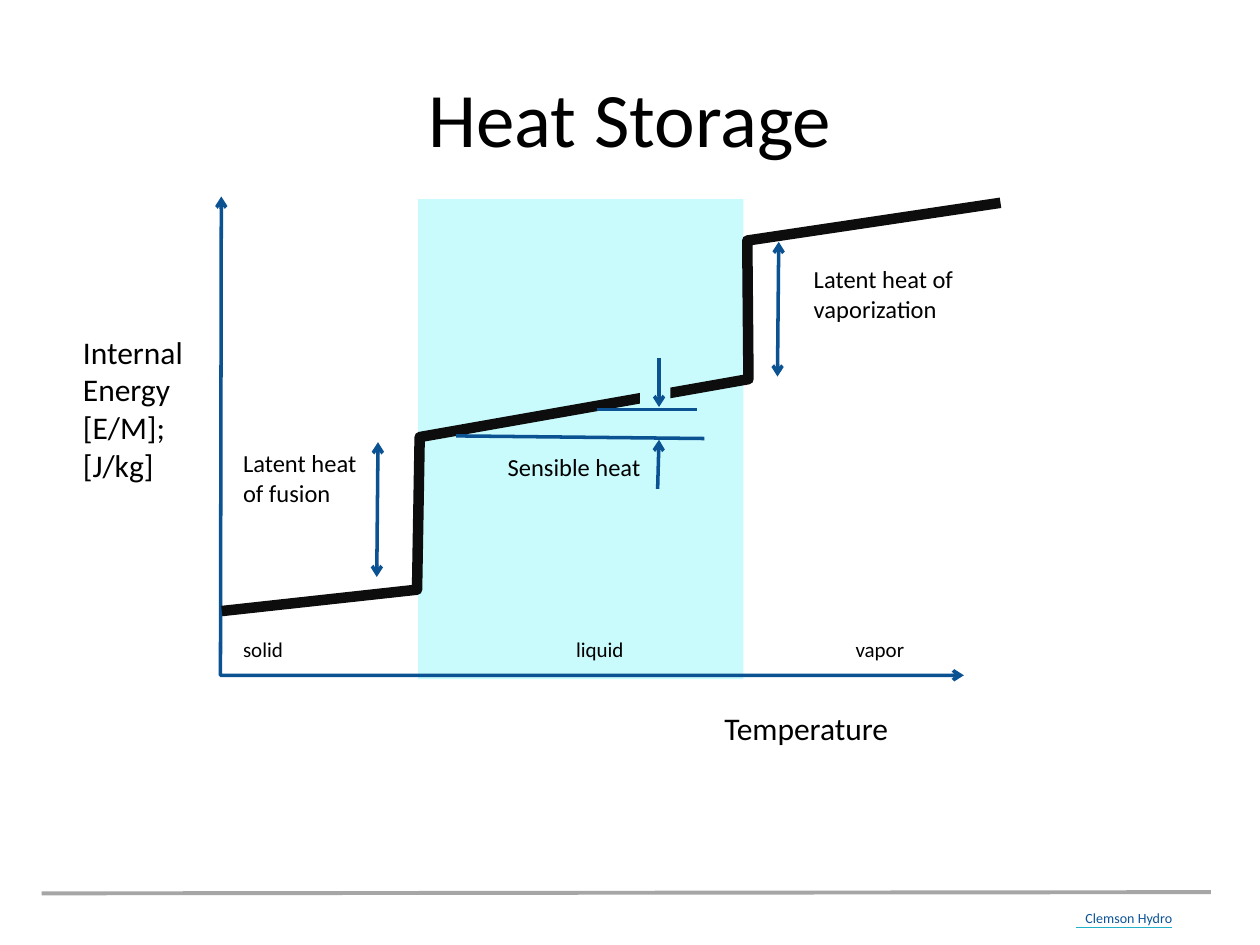
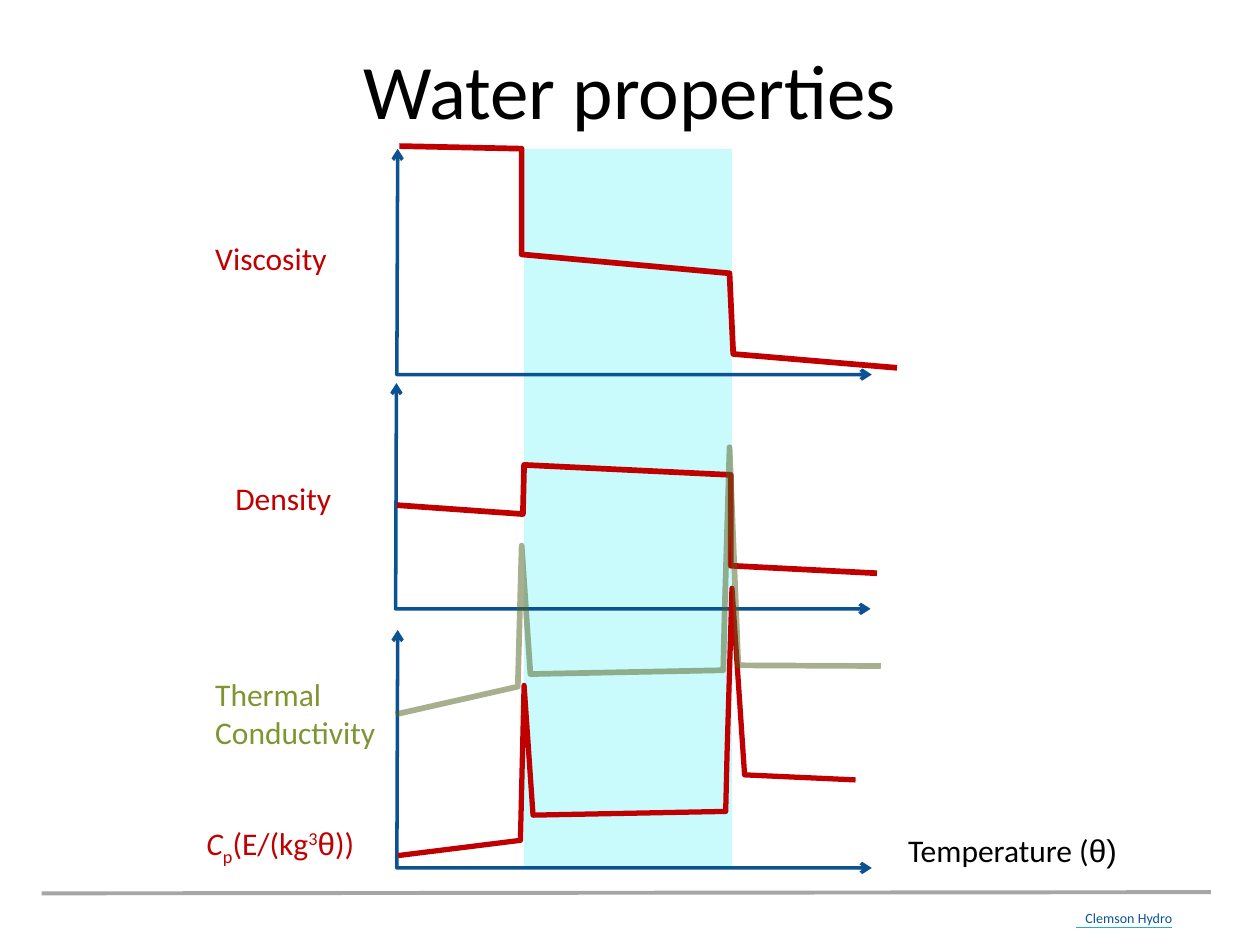
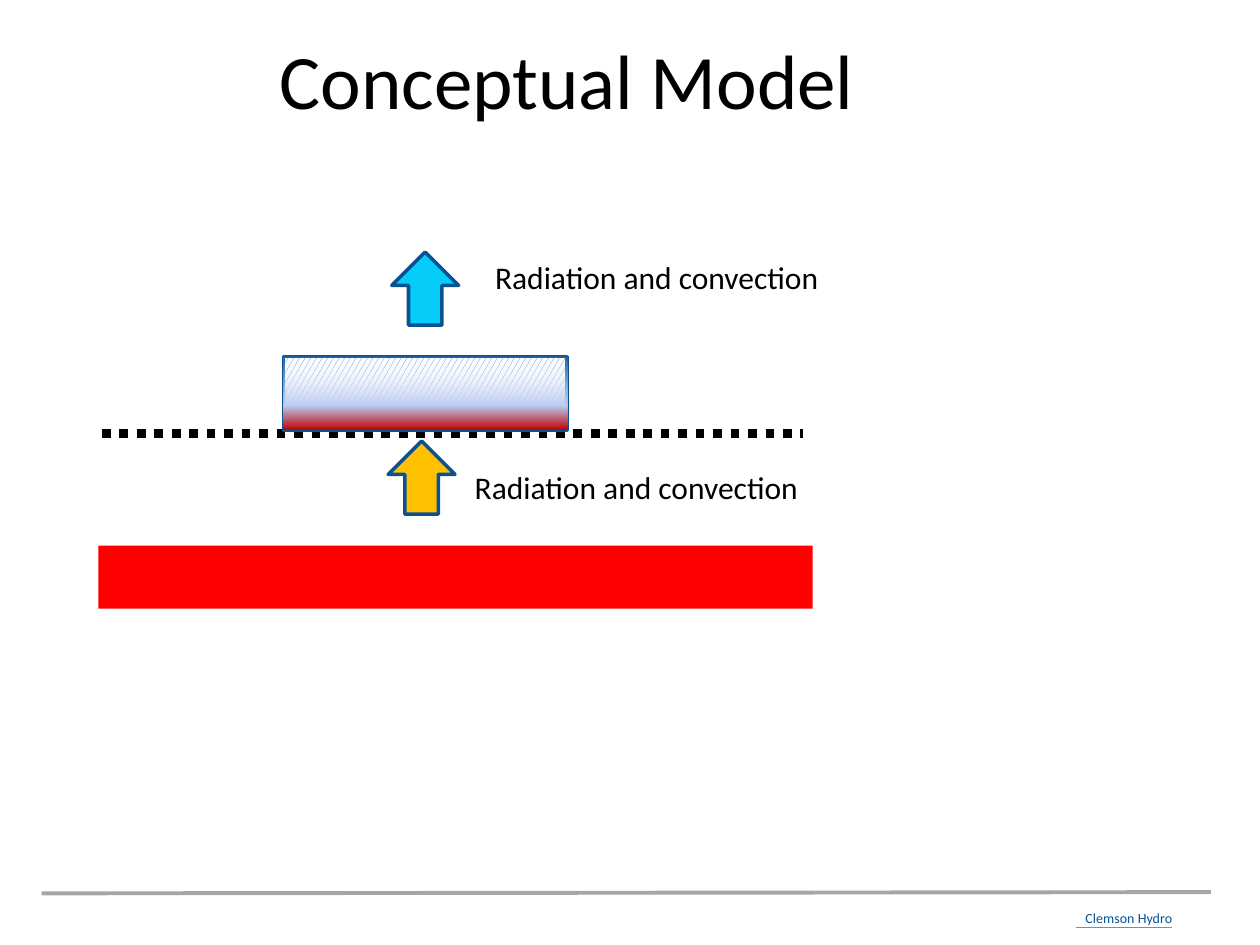
from lxml import etree
from pptx import Presentation
from pptx.dml.color import RGBColor
from pptx.enum import dml, shapes, text
from pptx.oxml import ns
from pptx.util import Pt

FONT = "Calibri"
BLACK, INK, RED = "000000", "0D0D0D", "C00000"
AXIS_BLUE, LIQUID, OLIVE = "0B5292", "C9FAFC", "7E9632"
BOTH, START, END = ("headEnd", "tailEnd"), ("headEnd",), ("tailEnd",)


def rgb(color):
    return RGBColor.from_string(color)


def add_xml(parent, tag, **attributes):
    return etree.SubElement(parent, ns.qn(tag), attributes)


def format_run(run, color=BLACK, baseline=None, **formats):
    for name, value in {"name": FONT, **formats}.items():
        setattr(run.font, name, value)
    run.font.color.rgb = rgb(color)
    if baseline:
        run.font._element.set("baseline", str(baseline * 1000))


def add_title(slide, heading, left, top):
    title = slide.shapes.title
    place = {"left": left, "top": top, "width": 648, "height": 90}
    for name, value in place.items():
        setattr(title, name, Pt(value))
    title.text_frame.vertical_anchor = text.MSO_ANCHOR.MIDDLE
    paragraph = title.text_frame.paragraphs[0]
    paragraph.alignment = text.PP_ALIGN.CENTER
    run = paragraph.add_run()
    run.text = heading
    format_run(run, size=Pt(44))


def add_label(slide, lines, box, size=18, color=BLACK, align=None, tabs=()):
    """Each line is a string or a list of (text, run formats) pairs."""
    label = slide.shapes.add_textbox(*map(Pt, box))
    frame = label.text_frame
    frame.word_wrap = True
    for number, line in enumerate(lines):
        paragraph = frame.add_paragraph() if number else frame.paragraphs[0]
        if tabs:
            stops = add_xml(paragraph._p.get_or_add_pPr(), "a:tabLst")
            for stop in tabs:
                add_xml(stops, "a:tab", pos=str(Pt(stop)), algn="l")
        paragraph.alignment = align
        for words, formats in [(line, {})] if isinstance(line, str) else line:
            run = paragraph.add_run()
            run.text = words
            format_run(run, color, **{"size": Pt(size), **formats})


def style_line(line, color, width, arrows=(), opacity=None, dash=None):
    line.color.rgb = rgb(color)
    line.width = Pt(width)
    if dash:
        line.dash_style = dash
    outline = line._ln
    if opacity:
        fill_color = outline.find(".//" + ns.qn("a:srgbClr"))
        add_xml(fill_color, "a:alpha", val=str(opacity * 1000))
    add_xml(outline, "a:round")
    for end in arrows:
        add_xml(outline, "a:" + end, type="arrow")


def add_line(slide, start, finish, color=AXIS_BLUE, width=2, **style):
    line = slide.shapes.add_connector(
        shapes.MSO_CONNECTOR.STRAIGHT, *map(Pt, start + finish))
    style_line(line.line, color, width, **style)
    add_xml(line._element.spPr, "a:effectLst")


def add_curve(slide, points, color, width, **style):
    start, *rest = [(Pt(x), Pt(y)) for x, y in points]
    builder = slide.shapes.build_freeform(*start)
    builder.add_line_segments(rest, close=False)
    curve = builder.convert_to_shape()
    curve.shadow.inherit = False
    curve.fill.background()
    style_line(curve.line, color, width, **style)


def add_axes(slide, left, top, width, height):
    bottom = top + height
    corner = [(left + 0.5, top), (left, bottom), (left + width, bottom)]
    add_curve(slide, corner, AXIS_BLUE, 2, arrows=BOTH)


def add_block(slide, box, fill=None, outlined=False,
              kind=shapes.MSO_SHAPE.RECTANGLE):
    block = slide.shapes.add_shape(kind, *map(Pt, box))
    block.shadow.inherit = False
    if fill:
        block.fill.solid()
        block.fill.fore_color.rgb = rgb(fill)
    if outlined:
        style_line(block.line, AXIS_BLUE, 2)
    else:
        block.line.fill.background()
    return block


def add_heated_plate(slide, box):
    """A confetti base under a see-through gradient, hot at the bottom."""
    base = add_block(slide, box, outlined=True)
    base.fill.patterned()
    base.fill.pattern = dml.MSO_PATTERN.LARGE_CONFETTI
    base.fill.fore_color.rgb = rgb("0F6FC6")
    base.fill.back_color.rgb = rgb("FFFFFF")

    heat = add_block(slide, box)
    heat.fill.gradient()
    heat.fill.gradient_angle = 90
    stops = heat._element.spPr.find(".//" + ns.qn("a:gsLst"))
    for stop in list(stops):
        stops.remove(stop)
    for percent, color, opacity in [(0, RED, 100), (33, "BBCBF2", 100),
                                    (100, "FFFFFF", 7)]:
        stop = add_xml(stops, "a:gs", pos=str(percent * 1000))
        shade = add_xml(stop, "a:srgbClr", val=color)
        add_xml(shade, "a:alpha", val=str(opacity * 1000))


def new_slide(deck, heading, left=36, top=0):
    slide = deck.slides.add_slide(deck.slide_layouts[5])
    add_line(slide, (23.8, 510.5), (691.9, 509.8), "A6A6A6", 2.25)
    add_label(slide, ["Clemson Hydro"], (612, 516.2, 66.2, 17.3), 8,
              "0B5395", text.PP_ALIGN.CENTER)
    add_line(slide, (614.9, 529.9), (669.6, 529.9), "21B2C9", 0.75)
    add_title(slide, heading, left, top)
    return slide


def heat_storage(deck):
    slide = new_slide(deck, "Heat Storage", top=21.6)
    add_block(slide, (239, 113.8, 185.8, 274.3), LIQUID)
    add_axes(slide, 126, 112.3, 424.8, 273.6)
    energy = [(126.7, 349.2), (238.3, 337), (239.8, 249.8),
              (427.7, 216.7), (427, 137.5), (571.7, 115.9)]
    add_curve(slide, energy, INK, 6)
    add_label(slide, ["Internal", "Energy", "[E/M];", "[J/kg]"],
              (40.3, 186.5, 72, 94.3))
    add_label(slide, ["Temperature"], (406.8, 401.8, 144, 28.8))
    add_label(slide, ["solid\tliquid\tvapor"], (131.8, 360, 408.2, 21.6), 12,
              tabs=(190.3, 350))

    add_label(slide, ["Latent heat of fusion"],
              (131.8, 252.7, 83.5, 41), 14)
    add_label(slide, ["Latent heat of vaporization"],
              (457.9, 147.6, 113.8, 41), 14)
    for x, top in [(216, 252.7), (445, 138.2)]:
        add_line(slide, (x, top), (x - 0.7, top + 77), arrows=BOTH)

    add_line(slide, (260.6, 249.1), (402.5, 250.6))
    add_line(slide, (341.3, 234), (398.2, 234))
    add_line(slide, (376.6, 251.3), (375.8, 279.4), arrows=START)
    add_block(slide, (365.8, 215.3, 17.3, 17.3), LIQUID)
    add_line(slide, (376.6, 204.5), (376.6, 232.6), arrows=END)
    add_label(slide, ["Sensible heat"], (283, 254.9, 149, 24.5), 14)


def water_properties(deck):
    slide = new_slide(deck, "Water properties", top=5.8)
    add_block(slide, (299.5, 85, 118.8, 411.1), LIQUID)
    for left, top, height in [(226.8, 360, 136), (226.1, 218.9, 129),
                              (226.8, 85, 129)]:
        add_axes(slide, left, top, 271.4, height)

    heat_capacity = [(227.5, 488.9), (297.4, 480.2), (299.5, 391.7),
                     (304.6, 465.8), (414.7, 463.7), (415.5, 430),
                     (418.3, 336.2), (425.5, 442.8), (488.9, 445.7)]
    density = [(226.8, 288.7), (298.8, 293.8), (299.5, 265.7),
               (417.6, 271.4), (417.6, 323.3), (501.1, 327.6)]
    viscosity = [(228.2, 83.5), (298.1, 85), (298.1, 145.4),
                 (416.9, 156.2), (419, 202.3), (512.6, 210.2)]
    conductivity = [(226.1, 408.2), (295.9, 392.4), (298.1, 311.8),
                    (303.1, 385.2), (413.3, 383), (414.1, 349),
                    (416.9, 255.6), (421.9, 380.2), (503.3, 380.6)]
    add_curve(slide, heat_capacity, RED, 3)
    add_curve(slide, density, RED, 3.25)
    add_curve(slide, viscosity, RED, 3.25)
    add_curve(slide, conductivity, "546422", 3.25, opacity=51)

    heat_symbol = [("C", {"italic": True}), ("p", {"baseline": -25}),
                   ("(E/(kg", {}), ("3", {"baseline": 30}),
                   ("θ", {"name": "Arial"}), ("))", {})]
    add_label(slide, [heat_symbol], (110.9, 467.3, 126, 28.8), color=RED)
    add_label(slide, ["Viscosity"], (115.9, 133.2, 139, 28.8), color=RED)
    add_label(slide, ["Density"], (127.4, 270, 131, 28.8), color=RED)
    add_label(slide, ["Thermal Conductivity"], (115.9, 382.3, 115.2, 51.1),
              color=OLIVE)
    add_label(slide, [[("Temperature (", {}), ("θ)", {"name": "Arial"})]],
              (511.9, 471.6, 156.2, 28.8))


def conceptual_model(deck):
    slide = new_slide(deck, "Conceptual Model", left=0)
    add_block(slide, (56.2, 311.8, 408.2, 36), "FF0000")
    add_line(slide, (58.3, 247.7), (458.6, 247.7), BLACK, 5,
             dash=dml.MSO_LINE.ROUND_DOT)
    add_heated_plate(slide, (162, 203.8, 162, 41.8))
    for left, top, color in [(221.8, 252, "FFC000"), (223.9, 144, "06CCFA")]:
        add_block(slide, (left, top, 38.2, 41.8), color, True,
                  shapes.MSO_SHAPE.UP_ARROW)
    for left, top in [(264.2, 264.2), (275.8, 144)]:
        add_label(slide, ["Radiation and convection"],
                  (left, top, 221.8, 28.8))


def main():
    deck = Presentation()
    deck.slide_width, deck.slide_height = Pt(720), Pt(540)
    heat_storage(deck)
    water_properties(deck)
    conceptual_model(deck)
    deck.save("out.pptx")


if __name__ == "__main__":
    main()
